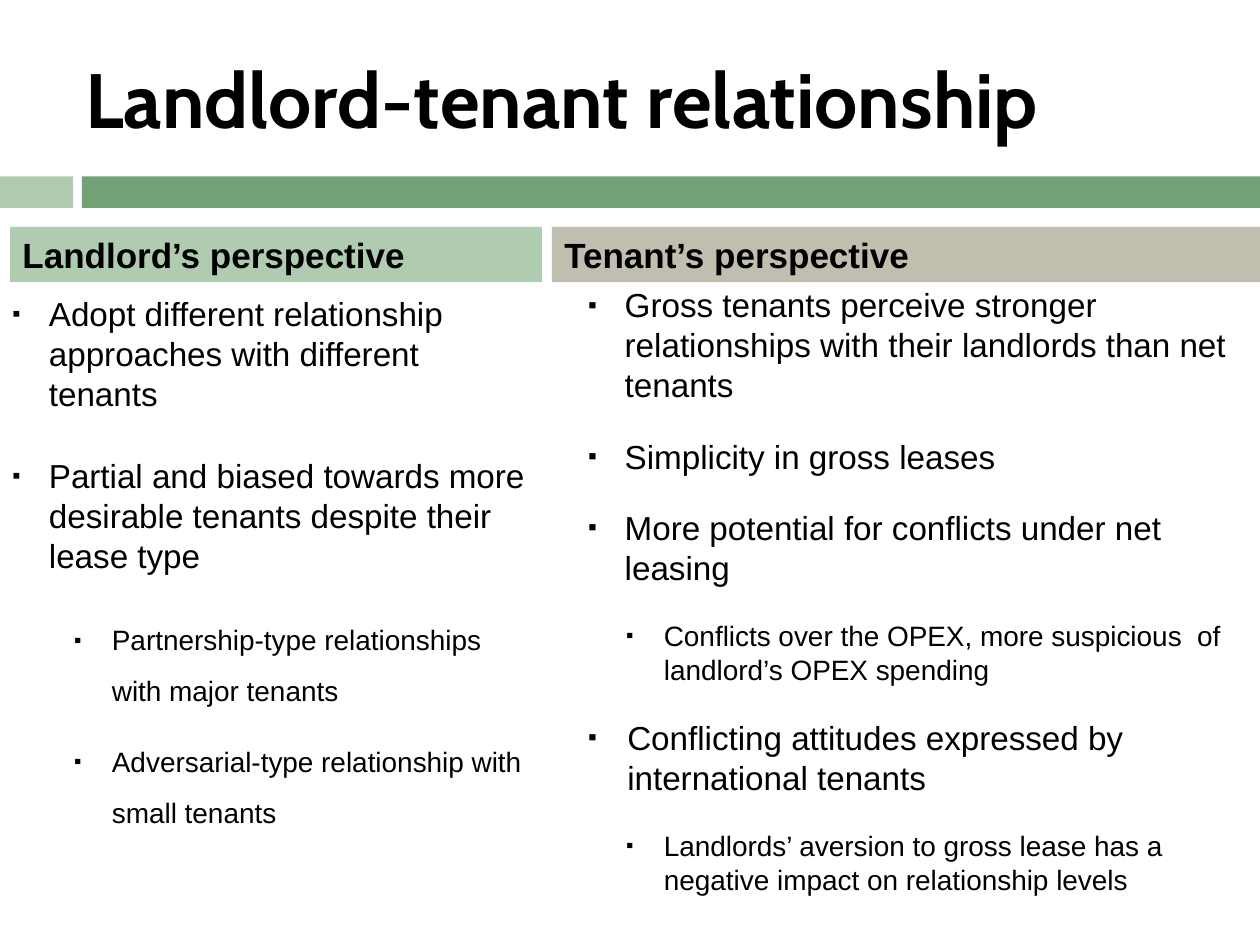
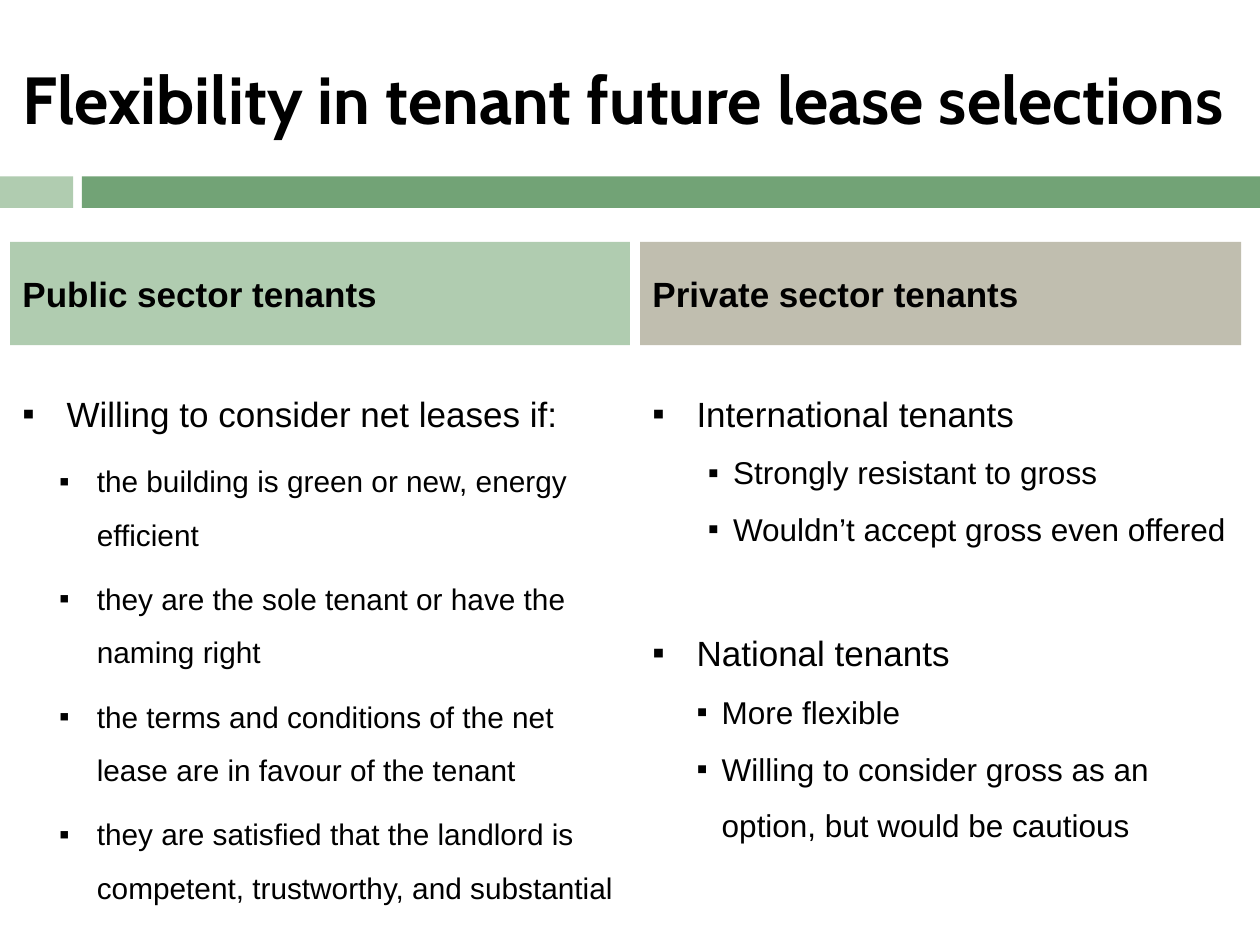
from lxml import etree
from pptx import Presentation
from pptx.dml.color import RGBColor
from pptx.enum import shapes, text
from pptx.oxml.ns import qn
from pptx.util import Inches, Pt

COLOURS = {"pale_green": "B0CCB0", "green": "72A376", "stone": "C0BEAF", "ink": "000000"}
BODY_FONT, TITLE_FONT = "Arial", "Cabin"
MIDDLE = text.MSO_ANCHOR.MIDDLE

# Bullet levels: size and space in points, indents in inches, bullet in percent
PERSPECTIVE_MAIN = dict(size=19, left=0.29, hang=0.29, lines=1.0, space=12, bullet=70)
PERSPECTIVE_SUB = dict(size=16, left=0.79, hang=0.3, lines=1.5, space=6, bullet=75)
TENANT_MAIN = dict(PERSPECTIVE_MAIN, left=0.48, space=9, bullet=75)
TENANT_WIDE = dict(TENANT_MAIN, left=0.5, hang=0.31)
TENANT_SUB = dict(PERSPECTIVE_SUB, lines=1.0, space=9)
SECTOR_MAIN = dict(size=20, left=0.35, hang=0.35, lines=1.5, space=0, bullet=100)
PUBLIC_MAIN = dict(SECTOR_MAIN, space=3)
PUBLIC_SUB = dict(PUBLIC_MAIN, size=17, left=0.59, hang=0.3)
INTERNATIONAL_SUB = dict(SECTOR_MAIN, size=18, left=0.64, hang=0.2)
NATIONAL_MAIN = dict(SECTOR_MAIN, before=36)
NATIONAL_SUB = dict(INTERNATIONAL_SUB, left=0.55)

SLIDES = [
    dict(
        title="Landlord-tenant relationship", title_box=(0.58, 0.3, 8.92, 0.95), title_size=44,
        columns=[
            dict(heading="Landlord’s perspective", fill="pale_green",
                 heading_box=(0.08, 1.8, 4.22, 0.44), list_box=(0, 2.28, 4.3, 4.99),
                 items=[
                     (PERSPECTIVE_MAIN, "Adopt different relationship approaches with different tenants"),
                     (PERSPECTIVE_MAIN, "Partial and biased towards more desirable tenants despite their lease type"),
                     (PERSPECTIVE_SUB, "Partnership-type relationships with major tenants"),
                     (PERSPECTIVE_SUB, "Adversarial-type relationship with small tenants"),
                 ]),
            dict(heading="Tenant’s perspective", fill="stone",
                 heading_box=(4.38, 1.8, 5.62, 0.44), list_box=(4.38, 2.21, 5.62, 5.29),
                 items=[
                     (TENANT_MAIN, "Gross tenants perceive stronger relationships with their landlords than net tenants"),
                     (TENANT_MAIN, "Simplicity in gross leases"),
                     (TENANT_MAIN, "More potential for conflicts under net leasing"),
                     (TENANT_SUB, "Conflicts over the OPEX, more suspicious  of landlord’s OPEX spending"),
                     (TENANT_WIDE, "Conflicting attitudes expressed by international tenants"),
                     (TENANT_SUB, "Landlords’ aversion to gross lease has a negative impact on relationship levels"),
                 ]),
        ]),
    dict(
        title="Flexibility in tenant future lease selections", title_box=(0.08, 0.3, 9.84, 0.95), title_size=38,
        columns=[
            dict(heading="Public sector tenants", fill="pale_green",
                 heading_box=(0.08, 1.92, 4.92, 0.82), list_box=(0.08, 2.9, 4.92, 4.76),
                 items=[
                     (PUBLIC_MAIN, "Willing to consider net leases if:"),
                     (PUBLIC_SUB, "the building is green or new, energy efficient"),
                     (PUBLIC_SUB, "they are the sole tenant or have the naming right"),
                     (PUBLIC_SUB, "the terms and conditions of the net lease are in favour of the tenant"),
                     (PUBLIC_SUB, "they are satisfied that the landlord is competent, trustworthy, and substantial"),
                 ]),
            dict(heading="Private sector tenants", fill="stone",
                 heading_box=(5.08, 1.92, 4.77, 0.82), list_box=(5.08, 2.9, 4.77, 4.6),
                 items=[
                     (SECTOR_MAIN, "International tenants"),
                     (INTERNATIONAL_SUB, "Strongly resistant to gross"),
                     (INTERNATIONAL_SUB, "Wouldn’t accept gross even offered"),
                     (NATIONAL_MAIN, "National tenants"),
                     (NATIONAL_SUB, "More flexible"),
                     (NATIONAL_SUB, "Willing to consider gross as an option, but would be cautious"),
                 ]),
        ]),
]


def apply(target, **values):
    for name, value in values.items():
        setattr(target, name, value)


def add_span(para, words, size, font=BODY_FONT, bold=False):
    span = para.add_run()
    span.text = words
    apply(span.font, name=font, size=Pt(size), bold=bold)
    span.font.color.rgb = RGBColor.from_string(COLOURS["ink"])


def add_block(page, box, fill):
    block = page.shapes.add_shape(shapes.MSO_SHAPE.RECTANGLE, *map(Inches, box))
    block.shadow.inherit = False
    block.fill.solid()
    block.fill.fore_color.rgb = RGBColor.from_string(COLOURS[fill])
    block.line.fill.background()
    return block


def add_band(page):
    add_block(page, (0, 1.4, 0.58, 0.25), "pale_green")
    add_block(page, (0.65, 1.4, 9.35, 0.25), "green")


def add_title(page, words, box, size):
    frame = page.shapes.add_textbox(*map(Inches, box)).text_frame
    apply(frame, word_wrap=True, vertical_anchor=MIDDLE)
    add_span(frame.paragraphs[0], words, size, TITLE_FONT, True)


def add_heading(page, words, box, fill):
    frame = add_block(page, box, fill).text_frame
    apply(frame, word_wrap=True, vertical_anchor=MIDDLE)
    para = frame.paragraphs[0]
    para.alignment = text.PP_ALIGN.LEFT
    add_span(para, words, 20, bold=True)


def set_bullet(para, level):
    props = para._p.get_or_add_pPr()
    props.set("marL", str(Inches(level["left"])))
    props.set("indent", str(-Inches(level["hang"])))
    for tag, name, value in (("a:buSzPct", "val", str(level["bullet"] * 1000)),
                             ("a:buFont", "typeface", BODY_FONT),
                             ("a:buChar", "char", "▪")):
        etree.SubElement(props, qn(tag)).set(name, value)


def add_list(page, box, items):
    frame = page.shapes.add_textbox(*map(Inches, box)).text_frame
    frame.word_wrap = True
    for index, (level, words) in enumerate(items):
        para = frame.add_paragraph() if index else frame.paragraphs[0]
        apply(para, line_spacing=level["lines"],
              space_before=Pt(level.get("before", level["space"])),
              space_after=Pt(level["space"]))
        set_bullet(para, level)
        add_span(para, words, level["size"])


def add_comparison(deck, content):
    page = deck.slides.add_slide(deck.slide_layouts[6])
    add_band(page)
    add_title(page, content["title"], content["title_box"], content["title_size"])
    for column in content["columns"]:
        add_list(page, column["list_box"], column["items"])
        add_heading(page, column["heading"], column["heading_box"], column["fill"])


def main():
    deck = Presentation()
    apply(deck, slide_width=Inches(10), slide_height=Inches(7.5))
    for content in SLIDES:
        add_comparison(deck, content)
    deck.save("out.pptx")


if __name__ == "__main__":
    main()
